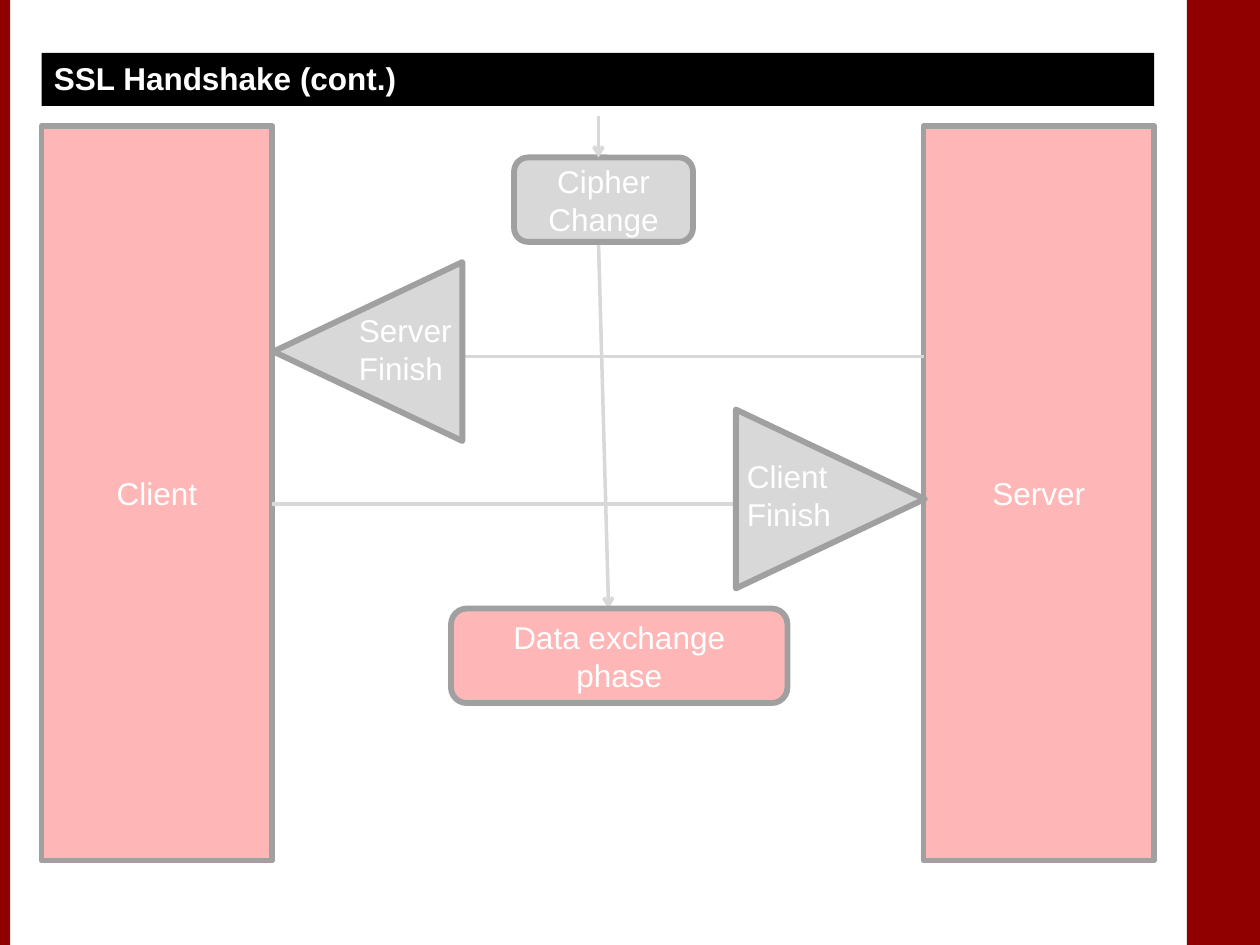
import pptx
import pptx.util
import pptx.dml.color
import pptx.enum.shapes
import pptx.enum.text
import pptx.oxml.ns
from lxml import etree

Inches = pptx.util.Inches
SHAPES = pptx.enum.shapes.MSO_SHAPE
ANCHOR = pptx.enum.text.MSO_ANCHOR
ALIGN = pptx.enum.text.PP_ALIGN
COLORS = {
    "band": "900000",
    "title": "000000",
    "text": "FFFFFF",
    "party": "FFB6B6",
    "message": "D8D8D8",
    "outline": "A0A0A0",
}


def color(name):
    return pptx.dml.color.RGBColor.from_string(COLORS[name])


def add_box(slide, kind, box, fill, outlined=True):
    shape = slide.shapes.add_shape(kind, *map(Inches, box))
    shape.shadow.inherit = False
    shape.fill.solid()
    shape.fill.fore_color.rgb = color(fill)
    if outlined:
        shape.line.color.rgb = color("outline")
        shape.line.width = pptx.util.Pt(3.35)
    else:
        shape.line.fill.background()
    return shape


def write(shape, text, align=ALIGN.CENTER, anchor=ANCHOR.MIDDLE, bold=False):
    frame = shape.text_frame
    frame.word_wrap = True
    frame.vertical_anchor = anchor
    frame.text = text
    paragraph = frame.paragraphs[0]
    paragraph.alignment = align
    paragraph.font.name = "Arial"
    paragraph.font.size = pptx.util.Pt(18)
    paragraph.font.bold = bold
    paragraph.font.color.rgb = color("text")


def add_line(slide, start, end, arrow=False):
    line = slide.shapes.add_connector(
        pptx.enum.shapes.MSO_CONNECTOR.STRAIGHT, *map(Inches, start + end))
    line.line.color.rgb = color("message")
    line.line.width = pptx.util.Pt(2)
    if arrow:
        outline = line.line._get_or_add_ln()
        etree.SubElement(outline, pptx.oxml.ns.qn("a:tailEnd"), type="arrow")
    properties = line._element.spPr
    etree.SubElement(properties, pptx.oxml.ns.qn("a:effectLst"))


def add_bands(slide, left_width, right_width):
    for left, width in ((10 - right_width, right_width), (0, left_width)):
        add_box(slide, SHAPES.RECTANGLE, (left, 0, width, 7.5), "band", False)


def add_title(slide, box, text):
    title = add_box(slide, SHAPES.RECTANGLE, box, "title", False)
    write(title, text, ALIGN.LEFT, ANCHOR.TOP, True)


def add_step(slide, kind, box, text, fill):
    write(add_box(slide, kind, box, fill), text)


def add_arrowhead(slide, box, rotation):
    left, top, width, height = box
    turned = (left + (width - height) / 2, top + (height - width) / 2, height, width)
    add_box(slide, SHAPES.ISOSCELES_TRIANGLE, turned, "message").rotation = rotation


def add_label(slide, box, text):
    label = slide.shapes.add_textbox(*map(Inches, box))
    write(label, text, ALIGN.LEFT, ANCHOR.TOP)


def add_handshake(slide, box):
    left, top, width, height = box
    party_width = 1.83
    client_edge = left + party_width
    server_edge = left + width - party_width
    for x, name in ((left, "Client"), (server_edge, "Server")):
        add_step(slide, SHAPES.RECTANGLE, (x, top, party_width, height), name, "party")

    add_line(slide, (4.75, 1.92), (4.83, 4.83), True)
    add_line(slide, (client_edge + 1, 2.83), (server_edge, 2.83))
    add_line(slide, (client_edge, 4), (server_edge - 1, 4))
    add_step(slide, SHAPES.ROUNDED_RECTANGLE, (4.08, 1.25, 1.42, 0.67),
             "Cipher Change", "message")
    add_line(slide, (4.75, 0.92), (4.75, 1.25), True)
    add_step(slide, SHAPES.ROUNDED_RECTANGLE, (3.58, 4.83, 2.67, 0.75),
             "Data exchange phase", "party")

    head_width, head_height = 1.5, 1.42
    add_arrowhead(slide, (client_edge + 0.01, 2.08, head_width, head_height), 270)
    add_arrowhead(slide, (server_edge - head_width + 0.01, 3.25, head_width, head_height), 90)
    add_label(slide, (2.75, 2.42, 1, 0.71), "Server Finish")
    add_label(slide, (5.83, 3.58, 1, 0.71), "Client Finish")


def main():
    presentation = pptx.Presentation()
    presentation.slide_width = Inches(10)
    presentation.slide_height = Inches(7.5)
    slide = presentation.slides.add_slide(presentation.slide_layouts[6])
    add_bands(slide, 0.08, 0.58)
    add_title(slide, (0.33, 0.42, 8.83, 0.42), "SSL Handshake (cont.)")
    add_handshake(slide, (0.33, 1, 8.83, 5.83))
    presentation.save("out.pptx")


if __name__ == "__main__":
    main()
